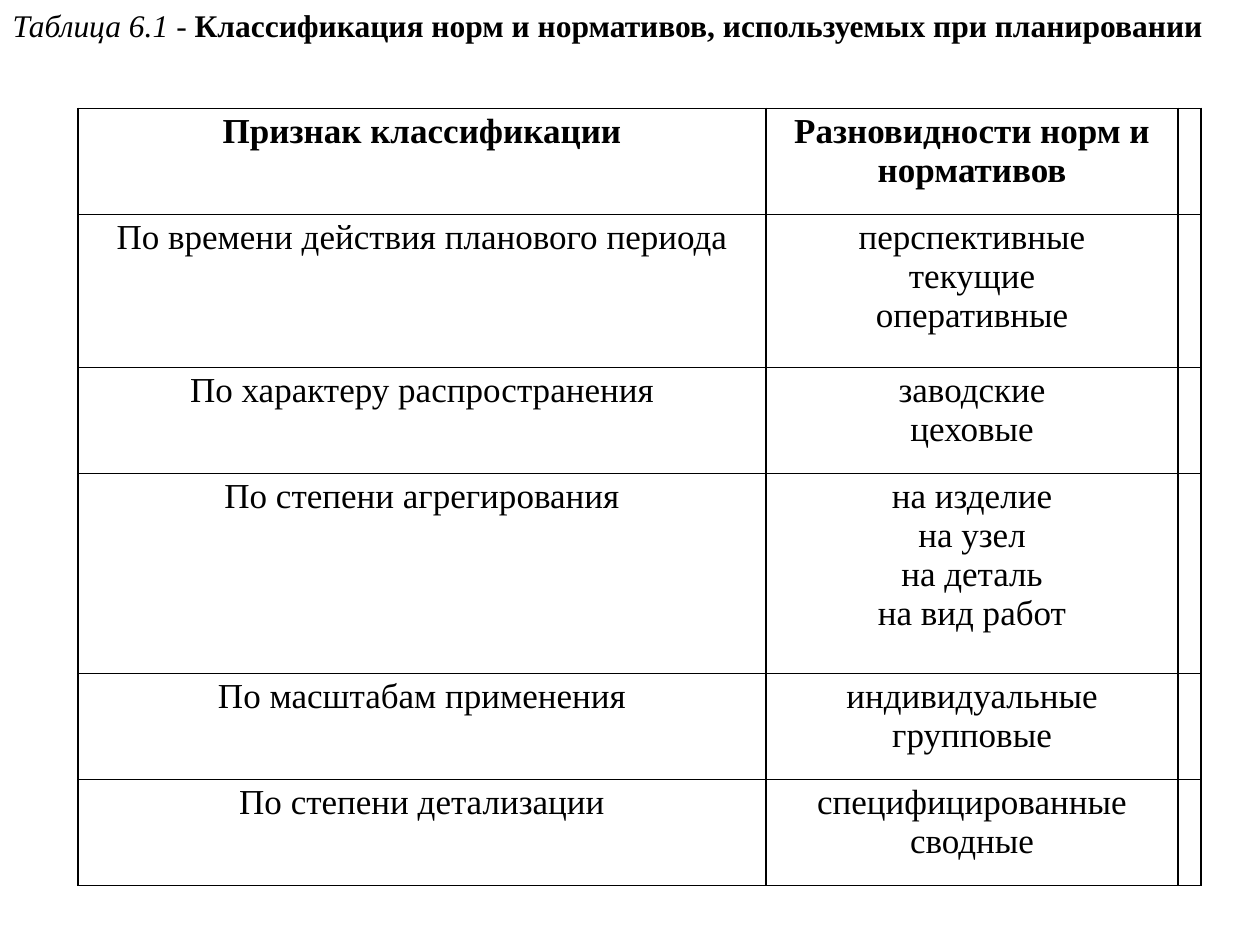
from dataclasses import dataclass

from lxml import etree
from pptx import Presentation
from pptx.dml.color import RGBColor
from pptx.enum.text import MSO_ANCHOR, MSO_AUTO_SIZE, PP_ALIGN
from pptx.oxml.ns import qn
from pptx.util import Pt

TOP = MSO_ANCHOR.TOP
LEFT, CENTER = PP_ALIGN.LEFT, PP_ALIGN.CENTER
NO_AUTOFIT = MSO_AUTO_SIZE.NONE
TITLE_ONLY = 5


@dataclass(frozen=True)
class Theme:
    font: str = "Times New Roman"
    ink: str = "000000"
    title_size: float = 18
    table_size: float = 20
    border: float = 1
    cell_margin: float = 2.2


@dataclass(frozen=True)
class Row:
    feature: str
    kinds: tuple[str, ...]
    lines: int  # lines of text the row has room for
    bold: bool = False

    @property
    def height(self) -> float:
        return 6.8 + 26.9 * self.lines


THEME = Theme()
COLUMN_WIDTHS = (393.2, 235.4, 13)
TABLE_LEFT, TABLE_TOP = 44.6, 61.9

ROWS = (
    Row("Признак классификации", ("Разновидности норм и нормативов",), 2, bold=True),
    Row("По времени действия планового периода",
        ("перспективные", "текущие", "оперативные"), 3),
    Row("По характеру распространения", ("заводские", "цеховые"), 2),
    Row("По степени агрегирования",
        ("на изделие", "на узел", "на деталь", "на вид работ"), 4),
    Row("По масштабам применения", ("индивидуальные", "групповые"), 2),
    Row("По степени детализации", ("специфицированные", "сводные"), 2),
)


def add_run(p, text: str, size: float, bold: bool = False, italic: bool = False) -> None:
    r = p.add_run()
    r.text = text
    f = r.font
    f.name, f.size, f.bold, f.italic = THEME.font, Pt(size), bold, italic
    f.color.rgb = RGBColor.from_string(THEME.ink)


def set_borders(cell) -> None:
    tcPr = cell._tc.get_or_add_tcPr()
    for side in ("a:lnL", "a:lnR", "a:lnT", "a:lnB"):
        ln = etree.SubElement(tcPr, qn(side), w=str(Pt(THEME.border)))
        fill = etree.SubElement(ln, qn("a:solidFill"))
        etree.SubElement(fill, qn("a:srgbClr"), val=THEME.ink)


def fill_cell(cell, lines: tuple[str, ...], bold: bool) -> None:
    cell.margin_left = cell.margin_right = Pt(THEME.cell_margin)
    cell.margin_top = cell.margin_bottom = Pt(THEME.cell_margin)
    cell.vertical_anchor = TOP
    set_borders(cell)
    cell.fill.background()
    tf = cell.text_frame
    for i, text in enumerate(lines):
        p = tf.add_paragraph() if i else tf.paragraphs[0]
        p.alignment = CENTER
        add_run(p, text, THEME.table_size, bold)


def add_title(s) -> None:
    title = s.shapes.title
    title.left, title.top, title.width, title.height = Pt(0), Pt(0), Pt(697), Pt(51)
    tf = title.text_frame
    tf.auto_size = NO_AUTOFIT
    tf.word_wrap = False
    tf.vertical_anchor = TOP
    p = tf.paragraphs[0]
    p.alignment = LEFT
    add_run(p, "Таблица 6.1 ", THEME.title_size, italic=True)
    add_run(p, "- ", THEME.title_size)
    add_run(p, "Классификация норм и нормативов, используемых при планировании",
            THEME.title_size, bold=True)


def add_norms_table(s) -> None:
    frame = s.shapes.add_table(
        len(ROWS), len(COLUMN_WIDTHS), Pt(TABLE_LEFT), Pt(TABLE_TOP),
        Pt(sum(COLUMN_WIDTHS)), Pt(sum(row.height for row in ROWS)))
    table = frame.table
    table.first_row = table.horz_banding = False
    for column, width in zip(table.columns, COLUMN_WIDTHS):
        column.width = Pt(width)
    for i, row in enumerate(ROWS):
        table.rows[i].height = Pt(row.height)
        # The narrow third column stays empty
        for j, lines in enumerate(((row.feature,), row.kinds, ())):
            fill_cell(table.cell(i, j), lines, row.bold)


def main() -> None:
    prs = Presentation()
    prs.slide_width, prs.slide_height = Pt(720), Pt(540)
    s = prs.slides.add_slide(prs.slide_layouts[TITLE_ONLY])
    add_norms_table(s)
    add_title(s)
    prs.save("out.pptx")


if __name__ == "__main__":
    main()
